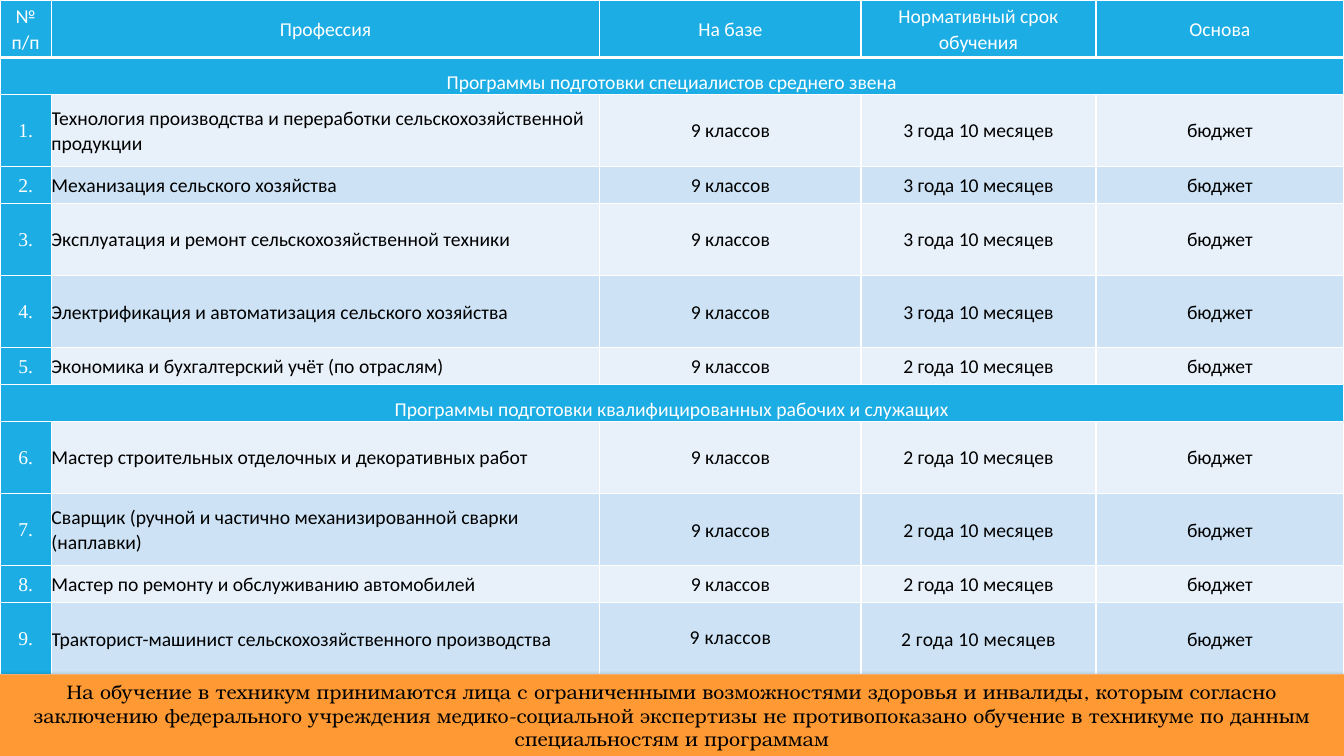
from lxml import etree
from pptx import Presentation
from pptx import util as u
from pptx.dml.color import RGBColor
from pptx.enum import shapes, text
from pptx.oxml import parse_xml
from pptx.oxml.ns import nsdecls, qn

WHITE = RGBColor(0xFF, 0xFF, 0xFF)
BLACK = RGBColor(0, 0, 0)
BLUE = RGBColor(0x1C, 0xAD, 0xE4)
ORANGE = RGBColor(0xFF, 0x99, 0x33)
STRIPES = (RGBColor(0xE8, 0xF1, 0xFA), RGBColor(0xCD, 0xE3, 0xF5))

SLIDE_W, SLIDE_H = u.Inches(13.33), u.Inches(7.5)
TABLE_H = u.Inches(6.69)
COLUMNS = (0.51, 5.44, 2.59, 2.33, 2.46)
HEADER_H, SHORT, TALL = 41, 26.4, 51.5
CENTER, LEFT = text.PP_ALIGN.CENTER, text.PP_ALIGN.LEFT
MIDDLE, BOTTOM = text.MSO_ANCHOR.MIDDLE, text.MSO_ANCHOR.BOTTOM

HEADINGS = ("№ п/п", "Профессия", "На базе", "Нормативный срок обучения", "Основа")
BASE, FUNDING = "9 классов", "бюджет"
LONG_TERM, SHORT_TERM = "3 года 10 месяцев", "2 года 10 месяцев"
SECTIONS = (
    ("Программы подготовки специалистов среднего звена", (
        ("Технология производства и переработки сельскохозяйственной продукции", LONG_TERM, TALL),
        ("Механизация сельского хозяйства", LONG_TERM, SHORT),
        ("Эксплуатация и ремонт сельскохозяйственной техники", LONG_TERM, TALL),
        ("Электрификация и автоматизация сельского хозяйства", LONG_TERM, TALL),
        ("Экономика и бухгалтерский учёт (по отраслям)", SHORT_TERM, SHORT),
    )),
    ("Программы подготовки квалифицированных рабочих и служащих", (
        ("Мастер строительных отделочных и декоративных работ", SHORT_TERM, TALL),
        ("Сварщик (ручной и частично механизированной сварки (наплавки)", SHORT_TERM, TALL),
        ("Мастер по ремонту и обслуживанию автомобилей", SHORT_TERM, SHORT),
        ("Тракторист-машинист сельскохозяйственного производства", SHORT_TERM, TALL),
    )),
)
ADMISSION = ("На обучение в техникум принимаются лица с ограниченными возможностями "
             "здоровья и инвалиды, которым согласно заключению федерального учреждения "
             "медико-социальной экспертизы не противопоказано обучение в техникуме по "
             "данным специальностям и программам")


def format_run(run, font, color):
    run.font.name = font
    run.font.size = u.Pt(14)
    run.font.bold = False
    run.font.color.rgb = color


def add_borders(cell, bottom=1):
    properties = cell._tc.get_or_add_tcPr()
    widths = {"lnL": 1, "lnR": 1, "lnT": 1, "lnB": bottom}
    for position, (side, width) in enumerate(widths.items()):
        properties.insert(position, parse_xml(
            f'<a:{side} {nsdecls("a")} w="{u.Pt(width)}"><a:solidFill>'
            f'<a:srgbClr val="{WHITE}"/></a:solidFill></a:{side}>'))


def fill_cell(cell, words, fill, color=WHITE, font="Calibri", align=CENTER,
              anchor=MIDDLE, bottom=1):
    cell.margin_left = cell.margin_right = cell.margin_top = cell.margin_bottom = 0
    cell.vertical_anchor = anchor
    cell.fill.solid()
    cell.fill.fore_color.rgb = fill
    add_borders(cell, bottom)
    line = cell.text_frame.paragraphs[0]
    line.text = words
    line.alignment = align
    line.line_spacing = 1.07
    line.space_after = u.Pt(8)
    format_run(line.runs[0], font, color)


def add_section_row(table, row, title):
    table.rows[row].height = u.Pt(SHORT)
    first = table.cell(row, 0)
    first.merge(table.cell(row, len(COLUMNS) - 1))
    fill_cell(first, title, BLUE, anchor=BOTTOM)


def add_programme_row(table, row, number, programme, stripe):
    name, term, height = programme
    table.rows[row].height = u.Pt(height)
    fill_cell(table.cell(row, 0), f"{number}.", BLUE, font="Times New Roman")
    fill_cell(table.cell(row, 1), name, stripe, BLACK, align=LEFT)
    for column, words in enumerate((BASE, term, FUNDING), 2):
        fill_cell(table.cell(row, column), words, stripe, BLACK)


def space_letters(cell, hundredths):
    cell.text_frame.paragraphs[0].runs[0].font._element.set("spc", str(hundredths))


def add_programmes(slide):
    row_count = 1 + sum(1 + len(programmes) for _, programmes in SECTIONS)
    table = slide.shapes.add_table(
        row_count, len(COLUMNS), 0, 0, SLIDE_W, TABLE_H).table
    for column, width in enumerate(COLUMNS):
        table.columns[column].width = u.Inches(width)
        fill_cell(table.cell(0, column), HEADINGS[column], BLUE, bottom=3)
    table.rows[0].height = u.Pt(HEADER_H)
    row, number = 1, 1
    for title, programmes in SECTIONS:
        add_section_row(table, row, title)
        row += 1
        for index, programme in enumerate(programmes):
            add_programme_row(table, row, number, programme, STRIPES[index % 2])
            row, number = row + 1, number + 1
    for column in (2, 3):
        space_letters(table.cell(row_count - 1, column), 20)
    table.cell(row_count - 1, 2).text_frame.paragraphs[0].line_spacing = u.Pt(15.6)


def add_shadow(shape):
    effects = shape._element.spPr.find(qn("a:effectLst"))
    shadow = etree.SubElement(
        effects, qn("a:outerShdw"), blurRad=str(u.Pt(3.5)), dist=str(u.Pt(1.1)),
        dir="5400000", rotWithShape="0")
    color = etree.SubElement(shadow, qn("a:srgbClr"), val=str(BLACK))
    etree.SubElement(color, qn("a:alpha"), val="45000")


def add_admission_note(slide):
    banner = slide.shapes.add_shape(
        shapes.MSO_SHAPE.RECTANGLE, 0, TABLE_H, SLIDE_W, SLIDE_H - TABLE_H)
    banner.shadow.inherit = False
    banner.fill.solid()
    banner.fill.fore_color.rgb = ORANGE
    banner.line.fill.background()
    add_shadow(banner)
    frame = banner.text_frame
    frame.word_wrap = True
    frame.vertical_anchor = MIDDLE
    frame.text = ADMISSION
    frame.paragraphs[0].alignment = CENTER
    format_run(frame.paragraphs[0].runs[0], "TeX Gyre Bonum", BLACK)


def main():
    deck = Presentation()
    deck.slide_width, deck.slide_height = SLIDE_W, SLIDE_H
    slide = deck.slides.add_slide(deck.slide_layouts[6])
    add_programmes(slide)
    add_admission_note(slide)
    deck.save("out.pptx")


if __name__ == "__main__":
    main()
